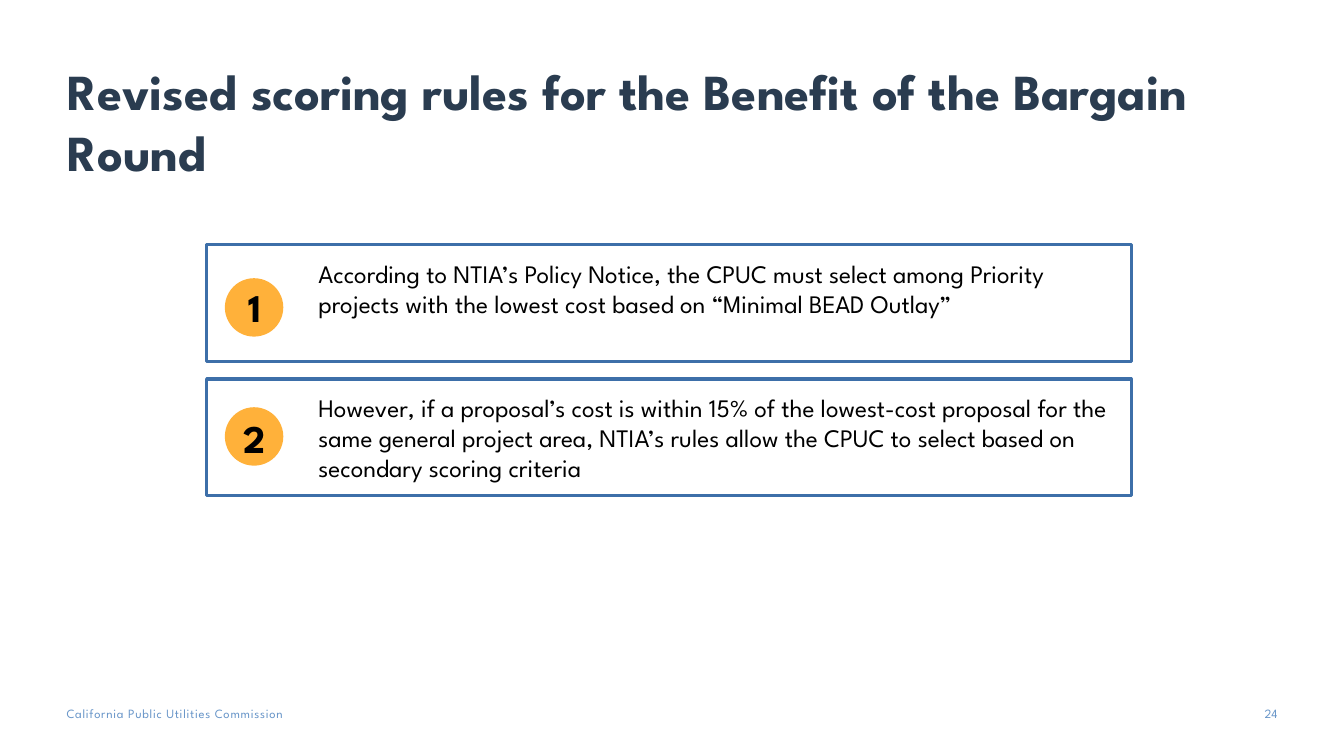
from pptx import Presentation
from pptx.dml.color import RGBColor
from pptx.enum.shapes import MSO_SHAPE as Preset
from pptx.enum.text import MSO_ANCHOR as Anchor, PP_ALIGN as Align
from pptx.util import Pt

PX = 9144  # EMU per px, 100 px to the inch
FONT = "League Spartan"
NAVY, BLUE, PALE_BLUE, AMBER, BLACK = "2A3C50", "3D6FA9", "6996C9", "FFB13A", "000000"

RULES = [
    # text, card top, badge circle top, badge number top
    ("According to NTIA’s Policy Notice, the CPUC must select among Priority "
     "projects with the lowest cost based on “Minimal BEAD Outlay”", 243, 276, 275),
    ("However, if a proposal’s cost is within 15% of the lowest-cost proposal for "
     "the same general project area, NTIA’s rules allow the CPUC to select based on "
     "secondary scoring criteria", 376, 404, 405),
]


def emu(*lengths):
    return [length * PX for length in lengths]


def color(hex_code):
    return RGBColor.from_string(hex_code)


def add_text(shapes, box, text, size, ink, bold=False, align=Align.LEFT,
             anchor=Anchor.TOP, insets=(10, 5, 10, 5)):
    frame = shapes.add_textbox(*emu(*box)).text_frame
    frame.word_wrap = True
    frame.vertical_anchor = anchor
    (frame.margin_left, frame.margin_top,
     frame.margin_right, frame.margin_bottom) = emu(*insets)
    paragraph = frame.paragraphs[0]
    paragraph.text = text
    paragraph.alignment = align
    font = paragraph.font
    font.name, font.size, font.bold = FONT, Pt(size), bold
    font.color.rgb = color(ink)
    return paragraph


def add_preset(shapes, preset, box, fill=None, line=None):
    shape = shapes.add_shape(preset, *emu(*box))
    shape.shadow.inherit = False
    if fill:
        shape.fill.solid()
        shape.fill.fore_color.rgb = color(fill)
    else:
        shape.fill.background()
    if line:
        shape.line.color.rgb = color(line)
        shape.line.width = Pt(2.25)
    else:
        shape.line.fill.background()


def add_rule(shapes, number, text, top, circle_top, number_top):
    """Add an outlined card with a numbered badge and its rule."""
    add_preset(shapes, Preset.RECTANGLE, (205, top, 917, 116), line=BLUE)
    badge = shapes.add_group_shape().shapes
    add_preset(badge, Preset.OVAL, (223, circle_top, 58, 58), fill=AMBER)
    add_text(badge, (229, number_top, 47, 58), str(number), 28, BLACK, bold=True,
             align=Align.CENTER, anchor=Anchor.MIDDLE, insets=(6, 6, 6, 6))
    add_text(shapes, (306, top + 8, 810, 101), text, 18, BLACK)


def add_footer(shapes):
    flush = (0, 0, 0, 0)
    agency = add_text(shapes, (66, 700, 321, 15),
                      "California Public Utilities Commission", 9, PALE_BLUE, insets=flush)
    agency.runs[0].font._element.set("spc", "50")
    add_text(shapes, (1225, 700, 42, 20), "24", 9, PALE_BLUE,
             align=Align.RIGHT, insets=flush)


def main():
    deck = Presentation()
    deck.slide_width, deck.slide_height = emu(1333, 750)
    shapes = deck.slides.add_slide(deck.slide_layouts[6]).shapes
    add_footer(shapes)
    add_text(shapes, (67, 40, 1200, 145),
             "Revised scoring rules for the Benefit of the Bargain Round", 36, NAVY,
             bold=True, anchor=Anchor.BOTTOM, insets=(0, 5, 10, 5))
    for number, rule in enumerate(RULES, start=1):
        add_rule(shapes, number, *rule)
    deck.save("out.pptx")


if __name__ == "__main__":
    main()
